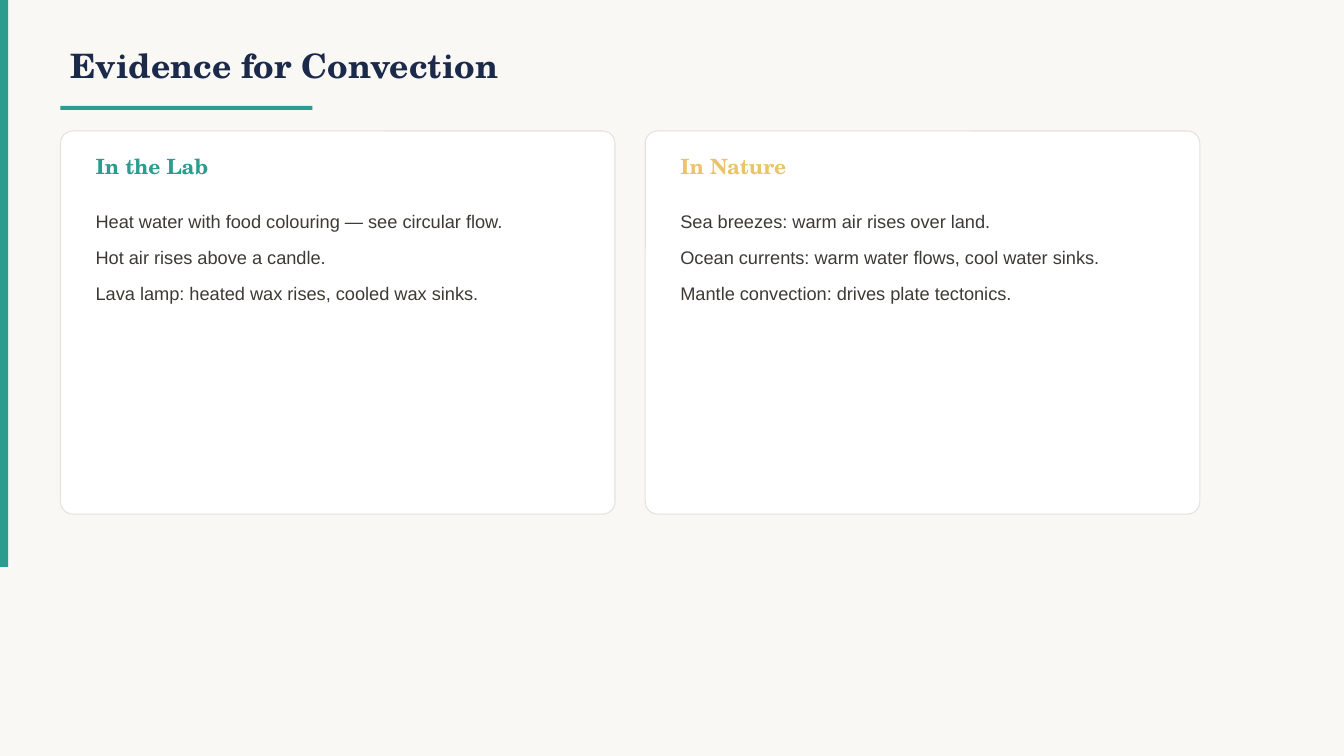
import pptx
import pptx.util
import pptx.dml.color
import pptx.enum.shapes
import pptx.enum.text

Inches, Pt = pptx.util.Inches, pptx.util.Pt
RGBColor = pptx.dml.color.RGBColor
SHAPE = pptx.enum.shapes.MSO_SHAPE
ANCHOR = pptx.enum.text.MSO_ANCHOR

CREAM = RGBColor(0xFA, 0xF8, 0xF5)
TEAL = RGBColor(0x2A, 0x9D, 0x8F)
GOLD = RGBColor(0xE9, 0xC4, 0x6A)
NAVY = RGBColor(0x1B, 0x2A, 0x4A)
INK = RGBColor(0x3D, 0x3A, 0x36)
WHITE = RGBColor(0xFF, 0xFF, 0xFF)
BORDER = RGBColor(0xE5, 0xE2, 0xDC)
SERIF, SANS = "TeX Gyre Schola", "Arial"

MARGIN, GAP, PAD = 0.6, 0.3, 0.25
CARD_TOP, CARD_W, CARD_H = 1.3, 5.5, 3.8

prs = pptx.Presentation()
prs.slide_width, prs.slide_height = Inches(13.33), Inches(7.5)
s = prs.slides.add_slide(prs.slide_layouts[6])
s.background.fill.solid()
s.background.fill.fore_color.rgb = CREAM


def add_block(kind, x, y, w, h, color):
    sp = s.shapes.add_shape(kind, Inches(x), Inches(y), Inches(w), Inches(h))
    sp.shadow.inherit = False
    sp.fill.solid()
    sp.fill.fore_color.rgb = color
    sp.line.fill.background()
    return sp


def add_text(text, x, y, w, h, size, font, color, bold=True, anchor=ANCHOR.MIDDLE):
    tf = s.shapes.add_textbox(Inches(x), Inches(y), Inches(w), Inches(h)).text_frame
    tf.word_wrap = True
    tf.vertical_anchor = anchor
    tf.text = text
    for p in tf.paragraphs:
        for r in p.runs:
            r.font.size, r.font.name, r.font.bold = Pt(size), font, bold
            r.font.color.rgb = color
    return tf


add_block(SHAPE.RECTANGLE, 0, 0, 0.08, 0.75 * 7.5, TEAL)
add_text("Evidence for Convection", MARGIN, 0.3, 10, 0.7, 24, SERIF, NAVY)
add_block(SHAPE.RECTANGLE, MARGIN, 1.05, 2.5, 0.04, TEAL)

cards = [
    ("In the Lab", TEAL, [
        "Heat water with food colouring — see circular flow.",
        "Hot air rises above a candle.",
        "Lava lamp: heated wax rises, cooled wax sinks.",
    ]),
    ("In Nature", GOLD, [
        "Sea breezes: warm air rises over land.",
        "Ocean currents: warm water flows, cool water sinks.",
        "Mantle convection: drives plate tectonics.",
    ]),
]
for col, (heading, accent, points) in enumerate(cards):
    x = MARGIN + col * (CARD_W + GAP)
    card = add_block(SHAPE.ROUNDED_RECTANGLE, x, CARD_TOP, CARD_W, CARD_H, WHITE)
    card.adjustments[0] = 0.032
    card.line.color.rgb = BORDER
    card.line.width = Pt(0.75)

    text_x, text_w = x + PAD, CARD_W - 2 * PAD
    add_text(heading, text_x, CARD_TOP + 0.15, text_w, 0.4, 15, SERIF, accent)
    tf = add_text("\n".join(points), text_x, CARD_TOP + 0.65, text_w, 2.9,
                  13, SANS, INK, False, ANCHOR.TOP)
    for p in tf.paragraphs:
        p.line_spacing = 1.4
        p.space_after = Pt(4)

prs.save("out.pptx")
